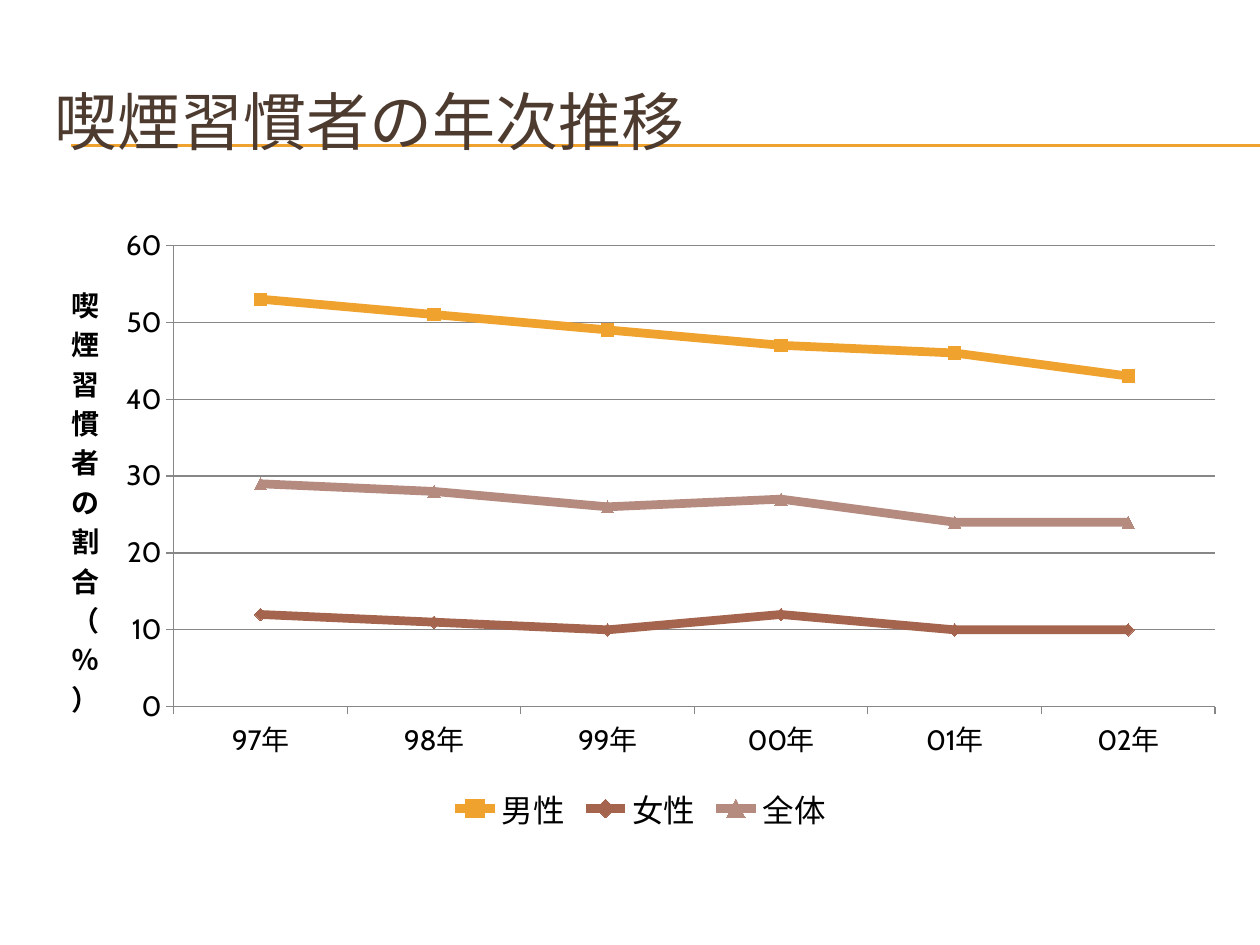
from lxml.etree import SubElement
from pptx import Presentation
from pptx.chart.data import CategoryChartData
from pptx.dml.color import RGBColor
from pptx.enum.chart import XL_CHART_TYPE as ChartType
from pptx.enum.chart import XL_LEGEND_POSITION as LegendPosition
from pptx.enum.chart import XL_MARKER_STYLE as Marker
from pptx.enum.chart import XL_TICK_MARK as TickMark
from pptx.enum.shapes import MSO_CONNECTOR as Connector
from pptx.enum.text import MSO_ANCHOR as Anchor
from pptx.enum.text import MSO_AUTO_SIZE as AutoSize
from pptx.enum.text import PP_ALIGN as Align
from pptx.oxml import parse_xml
from pptx.oxml.ns import nsdecls, qn
from pptx.util import Pt

TITLE = "喫煙習慣者の年次推移"
AXIS_TITLE = "喫煙習慣者の割合（％）"
YEARS = ["97年", "98年", "99年", "00年", "01年", "02年"]
SERIES = [
    ("男性", [53, 51, 49, 47, 46, 43], "F0A22E", Marker.SQUARE),
    ("女性", [12, 11, 10, 12, 10, 10], "A5644E", Marker.DIAMOND),
    ("全体", [29, 28, 26, 27, 24, 24], "B58B80", Marker.TRIANGLE),
]
THEME = {
    "font": "Cabin", "title": "4E3B30", "text": "000000",
    "rule": "F0A22E", "grid": "878787",
    "title_size": 36, "legend_size": 18, "axis_size": 16,
}
SLIDE_SIZE = (720, 540)
TITLE_BOX = (24, 36, 684, 66)
CHART_BOX = (24, 122.4, 684, 356.4)
RULE_LEFT, RULE_TOPS = 40.5, (82.8, 83.5)
PLOT_LAYOUT = {"x": 0.11, "y": 0.05, "w": 0.87, "h": 0.74}
AXIS_TITLE_LAYOUT = {"x": 0.02, "y": 0.1}


def points(values):
    return [Pt(value) for value in values]


def apply(target, **values):
    for name, value in values.items():
        setattr(target, name, value)


def format_font(font, size, color=THEME["text"], bold=False):
    apply(font, name=THEME["font"], size=Pt(size), bold=bold)
    font.color.rgb = RGBColor.from_string(color)


def format_line(line, color, width):
    line.color.rgb = RGBColor.from_string(color)
    line.width = Pt(width)


def layout_xml(fractions, inner=False):
    """Return a manual chart layout, given as fractions of the chart area."""
    layout = parse_xml(f"<c:layout {nsdecls('c')}><c:manualLayout/></c:layout>")
    settings = {"layoutTarget": "inner"} if inner else {}
    settings.update({f"{key}Mode": "edge" for key in "xy"})
    settings.update(fractions)
    for name, value in settings.items():
        SubElement(layout[0], qn(f"c:{name}")).set("val", str(value))
    return layout


def replace_layout(parent, layout, index):
    for old_layout in parent.findall(qn("c:layout")):
        parent.remove(old_layout)
    parent.insert(index, layout)


def add_title(slide):
    title = slide.shapes.title
    apply(title, **dict(zip(("left", "top", "width", "height"), points(TITLE_BOX))))
    frame = title.text_frame
    frame.text = TITLE
    apply(frame, vertical_anchor=Anchor.MIDDLE, word_wrap=True, auto_size=AutoSize.NONE)
    paragraph = frame.paragraphs[0]
    paragraph.alignment = Align.LEFT
    format_font(paragraph.runs[0].font, THEME["title_size"], THEME["title"])


def add_rules(slide):
    """Draw the double rule behind the title."""
    for top in RULE_TOPS:
        rule = slide.shapes.add_connector(
            Connector.STRAIGHT, *points((RULE_LEFT, top, SLIDE_SIZE[0], top)))
        format_line(rule.line, THEME["rule"], 0.75)
        SubElement(rule._element.spPr, qn("a:effectLst"))
        slide.shapes._spTree.insert(2, rule._element)


def format_axes(chart):
    value_axis = chart.value_axis
    for axis in (chart.category_axis, value_axis):
        format_font(axis.tick_labels.font, THEME["axis_size"])
        format_line(axis.format.line, THEME["grid"], 0.75)
    chart.category_axis.major_tick_mark = TickMark.OUTSIDE
    apply(value_axis, minimum_scale=0, maximum_scale=60, major_unit=10,
          major_tick_mark=TickMark.OUTSIDE, has_major_gridlines=True)
    format_line(value_axis.major_gridlines.format.line, THEME["grid"], 0.75)

    frame = value_axis.axis_title.text_frame
    frame.text = AXIS_TITLE
    format_font(frame.paragraphs[0].runs[0].font, THEME["axis_size"], bold=True)
    body = frame._txBody.find(qn("a:bodyPr"))
    body.set("rot", "0")
    body.set("vert", "wordArtVertRtl")
    replace_layout(value_axis.axis_title._element, layout_xml(AXIS_TITLE_LAYOUT), 1)


def add_chart(slide):
    data = CategoryChartData()
    data.categories = YEARS
    for name, values, _, _ in SERIES:
        data.add_series(name, values)
    chart = slide.shapes.add_chart(
        ChartType.LINE_MARKERS, *points(CHART_BOX), data).chart
    apply(chart, has_title=False, has_legend=True)
    format_font(chart.font, THEME["legend_size"])
    apply(chart.legend, position=LegendPosition.BOTTOM, include_in_layout=False)
    format_font(chart.legend.font, THEME["legend_size"])
    chart.plots[0].vary_by_categories = False
    for series, (_, _, color, marker) in zip(chart.plots[0].series, SERIES):
        series.smooth = False
        format_line(series.format.line, color, 5)
        apply(series.marker, style=marker, size=7)
        fill = series.marker.format.fill
        fill.solid()
        fill.fore_color.rgb = RGBColor.from_string(color)
        format_line(series.marker.format.line, color, 0.75)
    format_axes(chart)
    plot_area = chart._chartSpace.chart.plotArea
    replace_layout(plot_area, layout_xml(PLOT_LAYOUT, inner=True), 0)


def main():
    presentation = Presentation()
    presentation.slide_width, presentation.slide_height = points(SLIDE_SIZE)
    slide = presentation.slides.add_slide(presentation.slide_layouts[5])
    add_title(slide)
    add_rules(slide)
    add_chart(slide)
    presentation.save("out.pptx")


if __name__ == "__main__":
    main()
